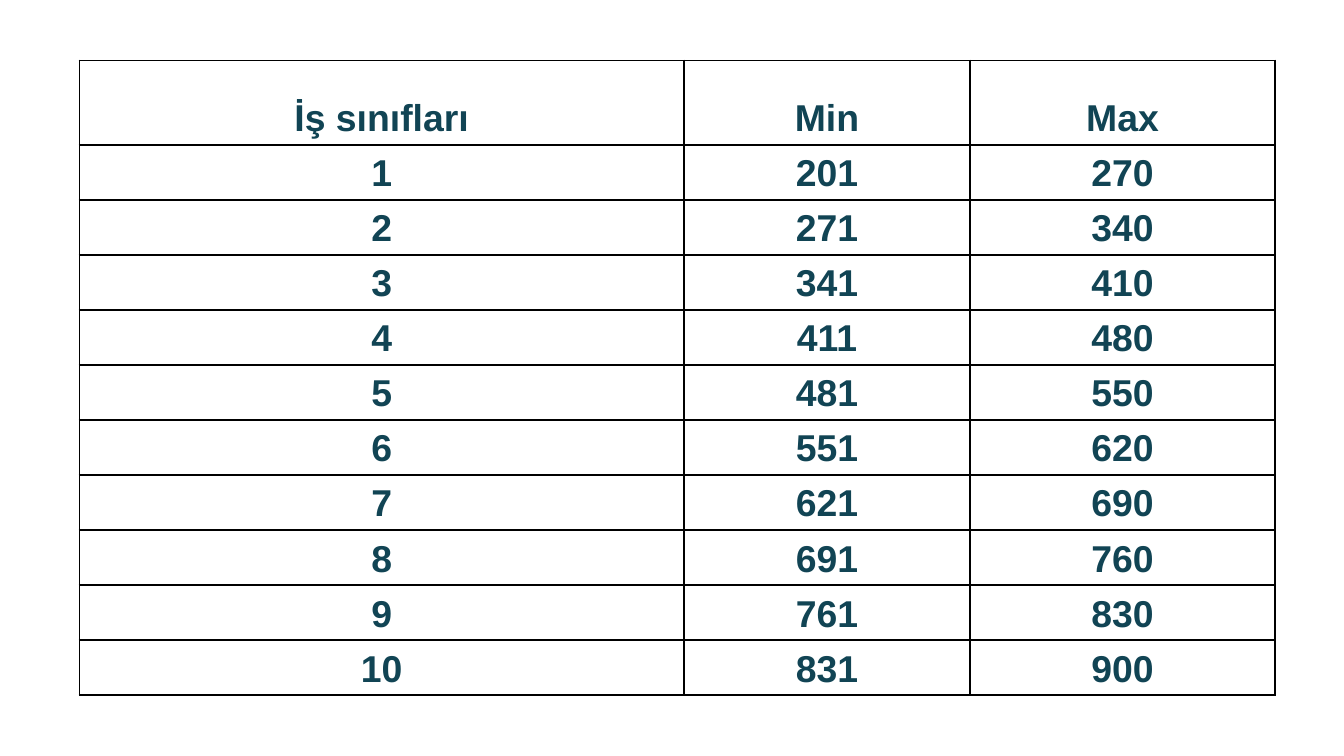
from pptx import Presentation
from pptx.dml.color import RGBColor as Color
from pptx.enum.text import MSO_ANCHOR as Anchor, PP_ALIGN as Align
from pptx.oxml import parse_xml
from pptx.oxml.ns import nsdecls
from pptx.util import Cm, Pt

THEME = {
    "font": {"name": "Arial", "size": Pt(20), "bold": True},
    "text": Color.from_string("114454"),
    "border": "000000",
    "border_width": Pt(1),
}
CELL_FORMAT = {
    "vertical_anchor": Anchor.BOTTOM,
    "margin_left": Cm(0.25),
    "margin_right": Cm(0.25),
    "margin_top": Cm(0.1),
    "margin_bottom": Cm(0.1),
}
HANGING_INDENT = Cm(0.95)
COLUMN_WIDTHS = [Cm(11.43), Cm(5.4), Cm(5.77)]
HEADER_HEIGHT, ROW_HEIGHT = Cm(1.6), Cm(1.04)
FIRST_MIN, CLASS_SPAN, CLASS_COUNT = 201, 70, 10


def apply_format(target, values):
    for name, value in values.items():
        setattr(target, name, value)


def add_borders(cell):
    properties = cell._tc.get_or_add_tcPr()
    for side in ("lnL", "lnR", "lnT", "lnB"):
        properties.append(parse_xml(
            f'<a:{side} {nsdecls("a")} w="{THEME["border_width"]}"><a:solidFill>'
            f'<a:srgbClr val="{THEME["border"]}"/></a:solidFill></a:{side}>'
        ))


rows = [("İş sınıfları", "Min", "Max")]
for index in range(CLASS_COUNT):
    minimum = FIRST_MIN + index * CLASS_SPAN
    rows.append((index + 1, minimum, minimum + CLASS_SPAN - 1))
row_heights = [HEADER_HEIGHT] + [ROW_HEIGHT] * CLASS_COUNT

presentation = Presentation()
apply_format(presentation, {"slide_width": Cm(25.4), "slide_height": Cm(14.29)})
slide = presentation.slides.add_slide(presentation.slide_layouts[6])

shape = slide.shapes.add_table(
    len(rows), len(COLUMN_WIDTHS), Cm(1.5), Cm(1.14), sum(COLUMN_WIDTHS), sum(row_heights)
)
table = shape.table
table.horz_banding = False

for column, width in zip(table.columns, COLUMN_WIDTHS):
    column.width = width

for row, height, values in zip(table.rows, row_heights, rows):
    row.height = height
    for cell, value in zip(row.cells, values):
        cell.text = str(value)
        apply_format(cell, CELL_FORMAT)
        add_borders(cell)
        cell.fill.background()
        paragraph = cell.text_frame.paragraphs[0]
        paragraph.alignment = Align.CENTER
        indents = paragraph._p.get_or_add_pPr()
        indents.set("marL", str(HANGING_INDENT))
        indents.set("indent", str(-HANGING_INDENT))
        font = paragraph.runs[0].font
        apply_format(font, THEME["font"])
        font.color.rgb = THEME["text"]

presentation.save("out.pptx")
